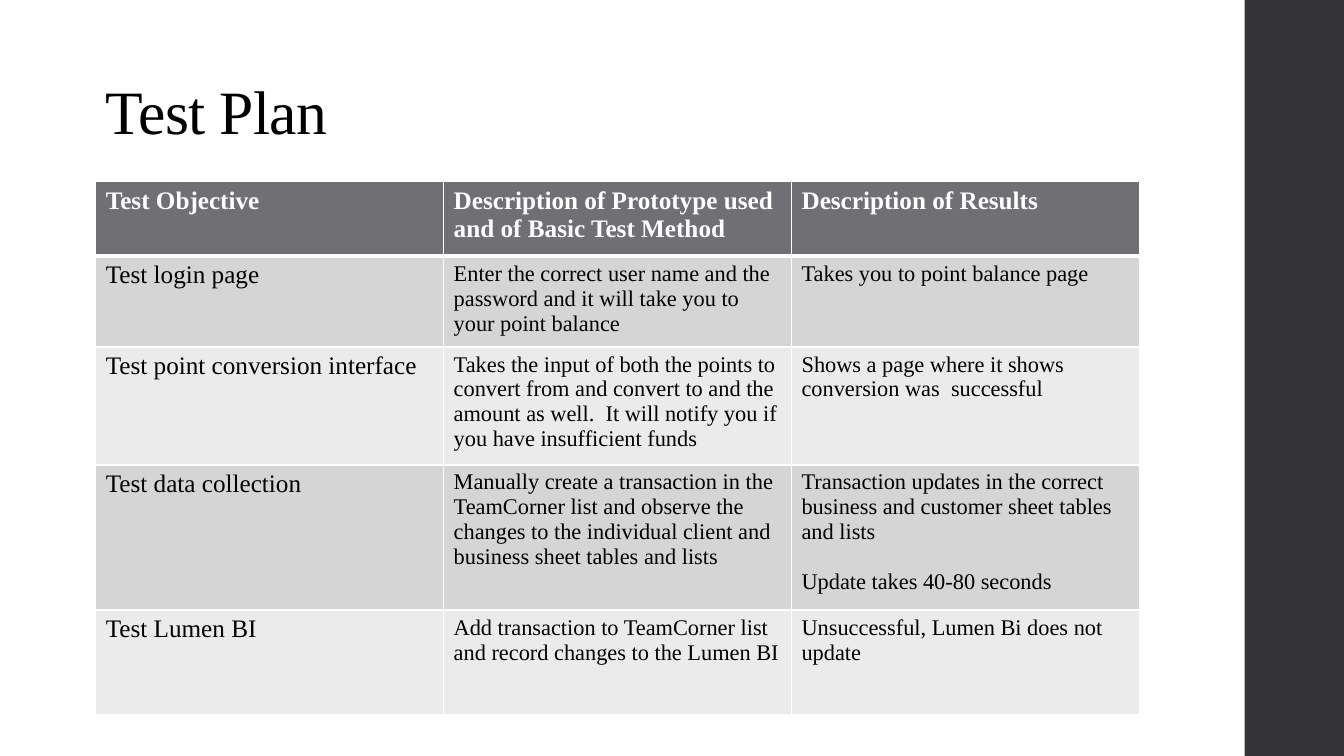
from lxml.etree import SubElement
from pptx import Presentation
from pptx.dml.color import RGBColor
from pptx.enum.shapes import MSO_SHAPE
from pptx.enum.text import MSO_ANCHOR, MSO_AUTO_SIZE, PP_ALIGN
from pptx.oxml.ns import qn
from pptx.util import Pt

FONT = "Times New Roman"
BLACK = RGBColor(0x00, 0x00, 0x00)
WHITE = RGBColor(0xFF, 0xFF, 0xFF)
SIDEBAR = RGBColor(0x35, 0x35, 0x37)
HEADER = RGBColor(0x6F, 0x6F, 0x74)
BANDS = [RGBColor(0xEB, 0xEB, 0xEB), RGBColor(0xD5, 0xD5, 0xD6)]

ROW_HEIGHTS = [53.3, 64.8, 84.2, 103.7, 74.9]
TEST_PLAN = [
    ("Test Objective",
     "Description of Prototype used and of Basic Test Method",
     "Description of Results"),
    ("Test login page",
     "Enter the correct user name and the password and it will take you to your point balance",
     "Takes you to point balance page"),
    ("Test point conversion interface",
     "Takes the input of both the points to convert from and convert to and the amount "
     "as well.  It will notify you if you have insufficient funds",
     "Shows a page where it shows conversion was  successful"),
    ("Test data collection",
     "Manually create a transaction in the TeamCorner list and observe the changes to the "
     "individual client and business sheet tables and lists",
     "Transaction updates in the correct business and customer sheet tables and lists\n"
     "Update takes 40-80 seconds"),
    ("Test Lumen BI",
     "Add transaction to TeamCorner list and record changes to the Lumen BI",
     "Unsuccessful, Lumen Bi does not update"),
]


def format_paragraph(paragraph, size, color, bold=False):
    paragraph.font.name = FONT
    paragraph.font.size = Pt(size)
    paragraph.font.bold = bold
    paragraph.font.color.rgb = color


def add_sidebar(slide, left, top, width, height):
    shape = slide.shapes.add_shape(
        MSO_SHAPE.RECTANGLE, Pt(left), Pt(top), Pt(width), Pt(height))
    shape.shadow.inherit = False
    shape.fill.solid()
    shape.fill.fore_color.rgb = SIDEBAR
    shape.line.fill.background()


def add_title(slide, left, top, width, height):
    title = slide.shapes.title
    title.left, title.top, title.width, title.height = map(Pt, (left, top, width, height))
    frame = title.text_frame
    frame.text = "Test Plan"
    frame.auto_size = MSO_AUTO_SIZE.NONE
    frame.vertical_anchor = MSO_ANCHOR.BOTTOM
    paragraph = frame.paragraphs[0]
    paragraph.alignment = PP_ALIGN.LEFT
    paragraph.line_spacing = 0.9
    format_paragraph(paragraph, 44, BLACK)
    paragraph.runs[0].font._element.set("spc", "-50")


def set_borders(cell, top, bottom):
    properties = cell._tc.get_or_add_tcPr()
    for side, width in (("L", 1), ("R", 1), ("T", top), ("B", bottom)):
        line = SubElement(properties, qn(f"a:ln{side}"), w=str(Pt(width)))
        fill = SubElement(line, qn("a:solidFill"))
        SubElement(fill, qn("a:srgbClr"), val=str(WHITE))


def fill_cell(cell, text, row, column):
    is_header = row == 0
    set_borders(cell, 3 if row == 1 else 1, 3 if is_header else 1)
    cell.fill.solid()
    cell.fill.fore_color.rgb = HEADER if is_header else BANDS[row % 2]
    cell.text = text
    size = 18 if is_header or column == 0 else 16
    for index, paragraph in enumerate(cell.text_frame.paragraphs):
        format_paragraph(paragraph, size, WHITE if is_header else BLACK, is_header)
        if index:
            paragraph.space_before = Pt(17.7)


def add_plan_table(slide, left, top, width, height):
    columns = len(TEST_PLAN[0])
    table = slide.shapes.add_table(
        len(TEST_PLAN), columns, Pt(left), Pt(top), Pt(width), Pt(height)).table
    for column in table.columns:
        column.width = Pt(width / columns)
    for row, texts in enumerate(TEST_PLAN):
        table.rows[row].height = Pt(height * ROW_HEIGHTS[row] / sum(ROW_HEIGHTS))
        for column, text in enumerate(texts):
            fill_cell(table.cell(row, column), text, row, column)


def main():
    presentation = Presentation()
    presentation.slide_width = Pt(960)
    presentation.slide_height = Pt(540)
    slide = presentation.slides.add_slide(presentation.slide_layouts[5])
    add_sidebar(slide, 889, 0, 71, 540)
    add_title(slide, 68.4, 52.5, 400, 57)
    add_plan_table(slide, 68.4, 129.8, 745.5, 380.9)
    presentation.save("out.pptx")


if __name__ == "__main__":
    main()
